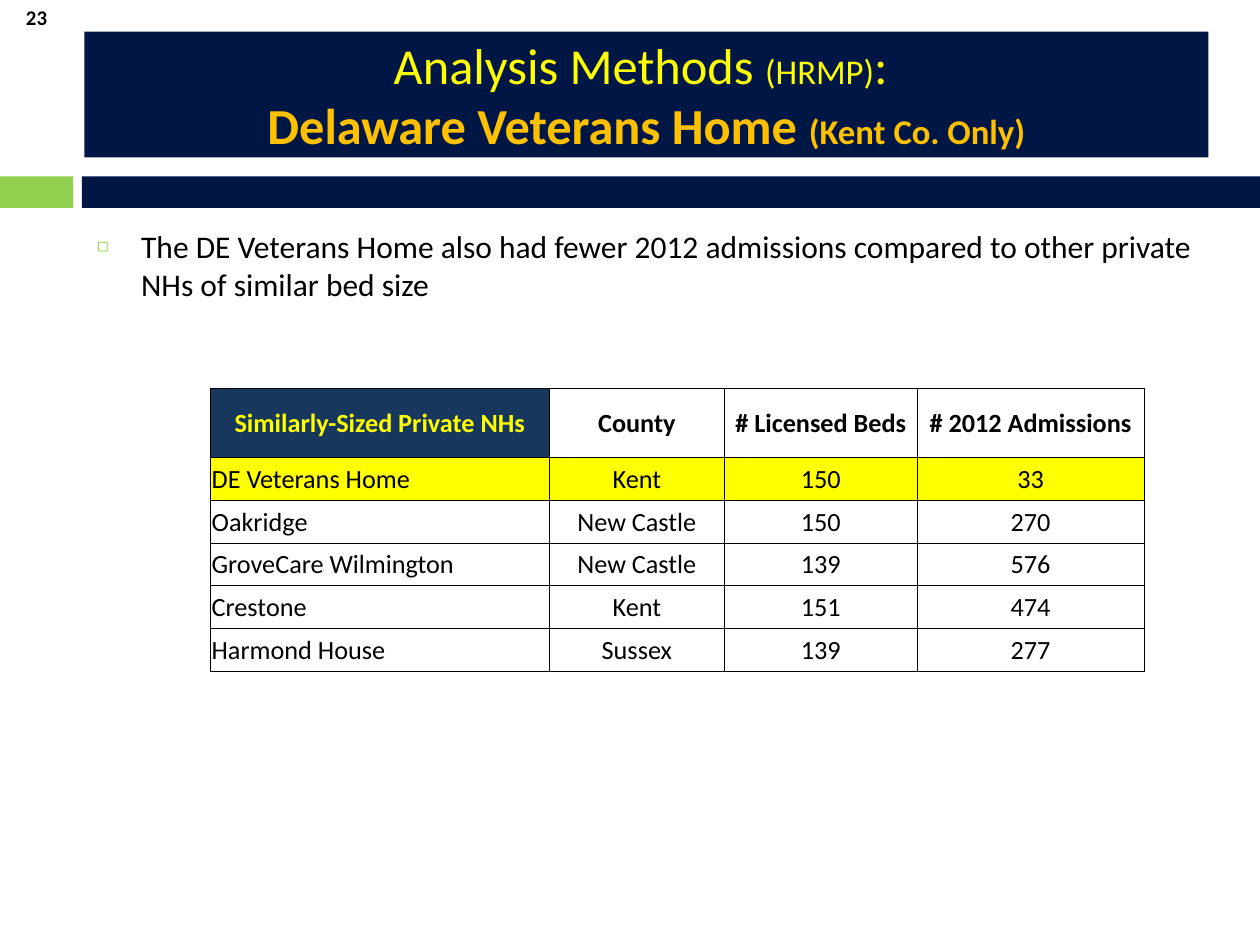
from dataclasses import dataclass

from lxml.etree import SubElement
from pptx import Presentation
from pptx.dml.color import RGBColor
from pptx.enum.shapes import MSO_SHAPE as Shape
from pptx.enum.text import MSO_ANCHOR as Anchor, MSO_AUTO_SIZE as AutoSize, PP_ALIGN as Align
from pptx.oxml.ns import qn
from pptx.util import Inches, Pt

WIDTH, HEIGHT = 10, 7.5
COLORS = {
    "navy": "001746", "green": "92D050", "yellow": "FFFF00", "orange": "FFC000",
    "slate": "17375D", "black": "000000",
}


@dataclass(frozen=True)
class Area:
    left: float
    top: float
    width: float
    height: float

    def lengths(self) -> tuple:
        return tuple(Inches(n) for n in (self.left, self.top, self.width, self.height))


@dataclass(frozen=True)
class Bar:
    area: Area
    color: str


@dataclass(frozen=True)
class Column:
    heading: str
    width: float
    align: Align


MARGIN, CONTENT_WIDTH = 0.67, 8.92
BAND_TOP, BAND_HEIGHT = 1.4, 0.25
TITLE_AREA = Area(MARGIN, 0.25, CONTENT_WIDTH, 1)
BODY_AREA = Area(MARGIN, 1.75, CONTENT_WIDTH, 3.42)
NUMBER_AREA = Area(0, 0, 0.58, 0.27)
BARS = [
    Bar(Area(0, BAND_TOP, 0.58, BAND_HEIGHT), "green"),
    Bar(Area(0.65, BAND_TOP, WIDTH - 0.65, BAND_HEIGHT), "navy"),
]
COLUMNS = [
    Column("Similarly-Sized Private NHs", 2.69, Align.LEFT),
    Column("County", 1.39, Align.CENTER),
    Column("# Licensed Beds", 1.53, Align.CENTER),
    Column("# 2012 Admissions", 1.8, Align.CENTER),
]
HOMES = [
    ("DE Veterans Home", "Kent", "150", "33"),
    ("Oakridge", "New Castle", "150", "270"),
    ("GroveCare Wilmington", "New Castle", "139", "576"),
    ("Crestone", "Kent", "151", "474"),
    ("Harmond House", "Sussex", "139", "277"),
]
HEADING_HEIGHT, ROW_HEIGHT = 0.55, 0.34


def rgb(name: str) -> RGBColor:
    return RGBColor.from_string(COLORS[name])


def place(box, area: Area) -> None:
    box.left, box.top, box.width, box.height = area.lengths()


def add_text(para, text: str, *, size: float, color: str = "black", bold: bool = False) -> None:
    span = para.add_run()
    span.text = text
    span.font.name = "Calibri"
    span.font.size = Pt(size)
    span.font.bold = bold
    span.font.color.rgb = rgb(color)


def draw_bar(page, bar: Bar) -> None:
    box = page.shapes.add_shape(Shape.RECTANGLE, *bar.area.lengths())
    box.shadow.inherit = False
    box.fill.solid()
    box.fill.fore_color.rgb = rgb(bar.color)
    box.line.fill.background()


def draw_title(page) -> None:
    box = page.shapes.title
    place(box, TITLE_AREA)
    box.fill.solid()
    box.fill.fore_color.rgb = rgb("navy")
    frame = box.text_frame
    frame.auto_size = AutoSize.NONE
    frame.vertical_anchor = Anchor.MIDDLE
    para = frame.paragraphs[0]
    para.alignment = Align.CENTER
    add_text(para, "Analysis Methods ", size=28.8, color="yellow")
    add_text(para, "(HRMP)", size=19.8, color="yellow")
    add_text(para, ": ", size=28.8, color="yellow")
    para.add_line_break()
    add_text(para, "Delaware Veterans Home ", size=28.8, color="orange", bold=True)
    add_text(para, "(Kent Co. Only)", size=19.8, color="orange", bold=True)


def add_bullet(para) -> None:
    props = para._p.get_or_add_pPr()
    props.set("marL", str(Inches(0.35)))
    props.set("indent", str(-Inches(0.35)))
    tint = SubElement(props, qn("a:buClr"))
    SubElement(tint, qn("a:srgbClr"), val=COLORS["green"])
    SubElement(props, qn("a:buSzPct"), val="60000")
    SubElement(props, qn("a:buChar"), char="◻")


def draw_body(page) -> None:
    box = page.placeholders[1]
    place(box, BODY_AREA)
    box.text_frame.auto_size = AutoSize.NONE
    para = box.text_frame.paragraphs[0]
    para.space_before = Pt(7)
    add_bullet(para)
    add_text(para, "The DE Veterans Home also had fewer 2012 admissions compared to "
                   "other private NHs of similar bed size", size=18)


def add_borders(cell) -> None:
    props = cell._tc.get_or_add_tcPr()
    for side in ("a:lnL", "a:lnR", "a:lnT", "a:lnB"):
        line = SubElement(props, qn(side), w=str(Pt(0.5)))
        fill = SubElement(line, qn("a:solidFill"))
        SubElement(fill, qn("a:srgbClr"), val=COLORS["black"])


def draw_cell(cell, text: str, *, align: Align, fill: str = "",
              color: str = "black", bold: bool = False) -> None:
    add_borders(cell)
    if fill:
        cell.fill.solid()
        cell.fill.fore_color.rgb = rgb(fill)
    else:
        cell.fill.background()
    cell.margin_left = cell.margin_right = cell.margin_top = Inches(0.01)
    cell.margin_bottom = 0
    cell.vertical_anchor = Anchor.MIDDLE
    para = cell.text_frame.paragraphs[0]
    para.alignment = align
    add_text(para, text, size=15, color=color, bold=bold)


def draw_table(page) -> None:
    heights = [HEADING_HEIGHT] + [ROW_HEIGHT] * len(HOMES)
    area = Area(1.67, 3.08, sum(column.width for column in COLUMNS), sum(heights))
    table = page.shapes.add_table(len(heights), len(COLUMNS), *area.lengths()).table
    table.first_row = table.horz_banding = False
    for row, height in zip(table.rows, heights):
        row.height = Inches(height)
    for c, column in enumerate(COLUMNS):
        table.columns[c].width = Inches(column.width)
        draw_cell(table.cell(0, c), column.heading, align=Align.CENTER, bold=True,
                  fill="" if c else "slate", color="black" if c else "yellow")
        for r, home in enumerate(HOMES):
            draw_cell(table.cell(r + 1, c), home[c], align=column.align,
                      fill="" if r else "yellow")


def draw_number(page) -> None:
    frame = page.shapes.add_textbox(*NUMBER_AREA.lengths()).text_frame
    frame.word_wrap = True
    frame.vertical_anchor = Anchor.MIDDLE
    para = frame.paragraphs[0]
    para.alignment = Align.CENTER
    add_text(para, "23", size=11.9, bold=True)


def main() -> None:
    deck = Presentation()
    deck.slide_width, deck.slide_height = Inches(WIDTH), Inches(HEIGHT)
    page = deck.slides.add_slide(deck.slide_layouts[1])
    for bar in BARS:
        draw_bar(page, bar)
    draw_body(page)
    draw_title(page)
    draw_table(page)
    draw_number(page)
    deck.save("out.pptx")


if __name__ == "__main__":
    main()
